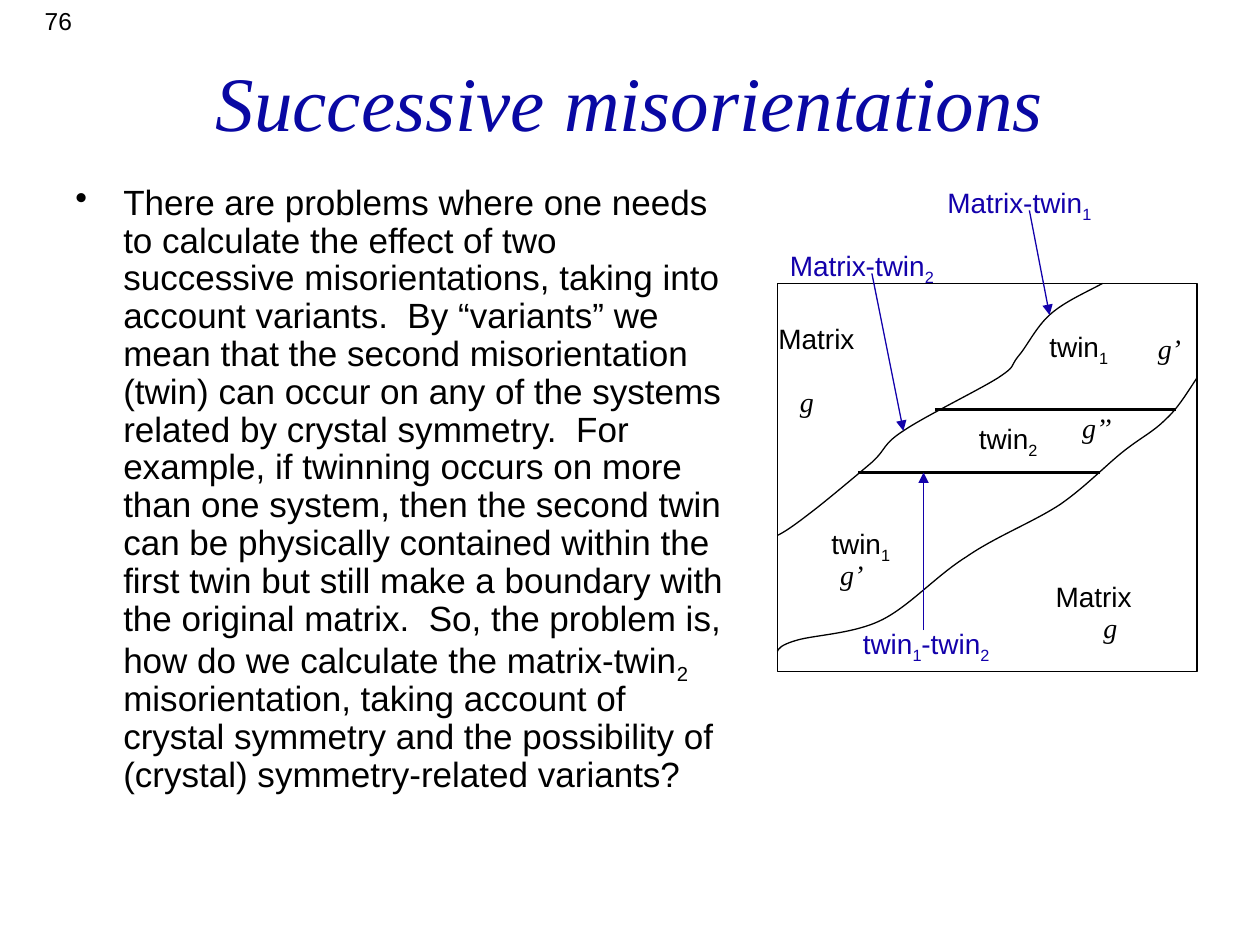
import pptx
import pptx.util
import pptx.dml.color
import pptx.enum.shapes
import pptx.enum.text
import pptx.oxml.ns
import pptx.oxml.xmlchemy
from pptx.util import Inches

BLACK = pptx.dml.color.RGBColor(0x00, 0x00, 0x00)
NAVY = pptx.dml.color.RGBColor(0x09, 0x08, 0xA3)
BLUE = pptx.dml.color.RGBColor(0x13, 0x01, 0xAB)
SANS = "Arial"
SERIF = "Times New Roman"
ALIGN = pptx.enum.text.PP_ALIGN
ANCHOR = pptx.enum.text.MSO_ANCHOR

BODY = (
    "There are problems where one needs to calculate the effect of two "
    "successive misorientations, taking into account variants.  By “variants” "
    "we mean that the second misorientation (twin) can occur on any of the "
    "systems related by crystal symmetry.  For example, if twinning occurs on "
    "more than one system, then the second twin can be physically contained "
    "within the first twin but still make a boundary with the original matrix.  "
    "So, the problem is, how do we calculate the matrix-twin",
    "2",
    " misorientation, taking account of crystal symmetry and the possibility of "
    "(crystal) symmetry-related variants?",
)

UPPER = [
    (8.75, 2.25), (8.6, 2.33), (8.44, 2.4), (8.33, 2.5),
    (8.22, 2.6), (8.15, 2.75), (8.08, 2.83), (8.01, 2.92), (8.07, 2.9), (7.92, 3),
    (7.76, 3.1), (7.33, 3.31), (7.17, 3.42), (7, 3.53), (7.04, 3.56), (6.92, 3.67),
    (6.79, 3.78), (6.54, 3.99), (6.42, 4.08), (6.29, 4.18), (6.23, 4.22), (6.17, 4.25),
]
LOWER = [
    (9.5, 3), (9.42, 3.12), (9.35, 3.24), (9.25, 3.33),
    (9.15, 3.43), (9.06, 3.47), (8.92, 3.58), (8.78, 3.69), (8.62, 3.86), (8.42, 4),
    (8.21, 4.14), (7.9, 4.26), (7.67, 4.42), (7.43, 4.57), (7.22, 4.81), (7, 4.92),
    (6.78, 5.03), (6.47, 5.04), (6.33, 5.08), (6.19, 5.12), (6.18, 5.15), (6.17, 5.17),
]
EDGES = [(7.42, 9.33, 3.25), (6.81, 8.73, 3.75)]
LABELS = [
    (7.67, 3.3, 0.68, BLACK, ("twin", "2")),
    (8.23, 2.57, 0.68, BLACK, ("twin", "1")),
    (6.5, 4.13, 0.68, BLACK, ("twin", "1")),
    (6.08, 2.5, 0.81, BLACK, ("Matrix",)),
    (8.28, 4.55, 0.81, BLACK, ("Matrix",)),
    (7.42, 1.42, 1.36, BLUE, ("Matrix-twin", "1")),
    (6.17, 1.92, 1.36, BLUE, ("Matrix-twin", "2")),
    (6.75, 4.92, 1.24, BLUE, ("twin", "1", "-twin", "2")),
]
ARROWS = [
    ((6.92, 2.17), (7.17, 3.42)),
    ((8.17, 1.67), (8.33, 2.5)),
    ((7.33, 5), (7.33, 3.75)),
]
SYMBOLS = [
    (6.25, 3, 0.34, "g"),
    (8.49, 3.21, 0.47, "g’’"),
    (8.66, 4.8, 0.34, "g"),
    (6.57, 4.38, 0.41, "g’"),
    (9.09, 2.58, 0.41, "g’"),
]


def make_tag(name):
    return pptx.oxml.xmlchemy.OxmlElement(name)


def add_text(slide, box, parts, size, color=BLACK, face=SANS, wrap=False):
    frame = slide.shapes.add_textbox(*map(Inches, box)).text_frame
    frame.word_wrap = wrap
    para = frame.paragraphs[0]
    for index, part in enumerate(parts):
        run = para.add_run()
        run.text = part
        run.font.size = pptx.util.Pt(size)
        run.font.name = face
        run.font.italic = face == SERIF
        run.font.color.rgb = color
        if index % 2:
            run.font._element.set("baseline", "-25000")
    return frame


def add_body(slide):
    frame = add_text(slide, (0.5, 1.42, 5.42, 5.08), BODY, 20, wrap=True)
    para = frame.paragraphs[0]
    para.line_spacing = 0.9
    para.space_before = pptx.util.Pt(4)
    props = para._p.get_or_add_pPr()
    props.set("marL", str(Inches(0.38)))
    props.set("indent", str(Inches(-0.38)))
    bullet = make_tag("a:buChar")
    bullet.set("char", "•")
    props.append(bullet)


def set_line(shape, color, width):
    shape.line.color.rgb = color
    shape.line.width = pptx.util.Pt(width)


def add_frame(slide):
    rect = slide.shapes.add_shape(
        pptx.enum.shapes.MSO_SHAPE.RECTANGLE,
        Inches(6.17), Inches(2.25), Inches(3.33), Inches(3.08))
    rect.shadow.inherit = False
    rect.fill.background()
    set_line(rect, BLACK, 0.75)


def add_curve(slide, points):
    pen = slide.shapes.build_freeform(*map(Inches, points[0]))
    pen.add_line_segments([tuple(map(Inches, p)) for p in points[1:]], close=False)
    curve = pen.convert_to_shape()
    curve.shadow.inherit = False
    curve.fill.background()
    set_line(curve, BLACK, 0.75)
    steps = list(curve._element.iter(pptx.oxml.ns.qn("a:lnTo")))
    for start in range(0, len(steps), 3):
        bend = make_tag("a:cubicBezTo")
        steps[start].addprevious(bend)
        for step in steps[start:start + 3]:
            bend.append(step[0])
            step.getparent().remove(step)


def add_line(slide, start, end, color, width, arrow=False):
    line = slide.shapes.add_connector(
        pptx.enum.shapes.MSO_CONNECTOR.STRAIGHT, *map(Inches, start + end))
    set_line(line, color, width)
    if arrow:
        tip = make_tag("a:tailEnd")
        tip.set("type", "triangle")
        line.line._get_or_add_ln().append(tip)
    line._element.spPr.append(make_tag("a:effectLst"))


def main():
    deck = pptx.Presentation()
    deck.slide_width = Inches(10)
    deck.slide_height = Inches(7.5)
    slide = deck.slides.add_slide(deck.slide_layouts[6])

    page = add_text(slide, (0, 0, 0.67, 0.33), ("76",), 14, wrap=True)
    page.paragraphs[0].alignment = ALIGN.RIGHT
    title = add_text(slide, (0.75, 0.17, 8.5, 1.25), ("Successive misorientations",),
                     44, NAVY, SERIF, True)
    title.paragraphs[0].alignment = ALIGN.CENTER
    title.vertical_anchor = ANCHOR.MIDDLE
    add_body(slide)

    add_frame(slide)
    for points in (UPPER, LOWER):
        add_curve(slide, points)
    for left, right, top in EDGES:
        add_line(slide, (left, top), (right, top), BLACK, 2.25)
    for left, top, width, color, parts in LABELS:
        add_text(slide, (left, top, width, 0.37), parts, 16, color)
    for start, end in ARROWS:
        add_line(slide, start, end, BLUE, 0.75, True)
    for left, top, width, sign in SYMBOLS:
        add_text(slide, (left, top, width, 0.37), (sign,), 16, face=SERIF)
    deck.save("out.pptx")


if __name__ == "__main__":
    main()
